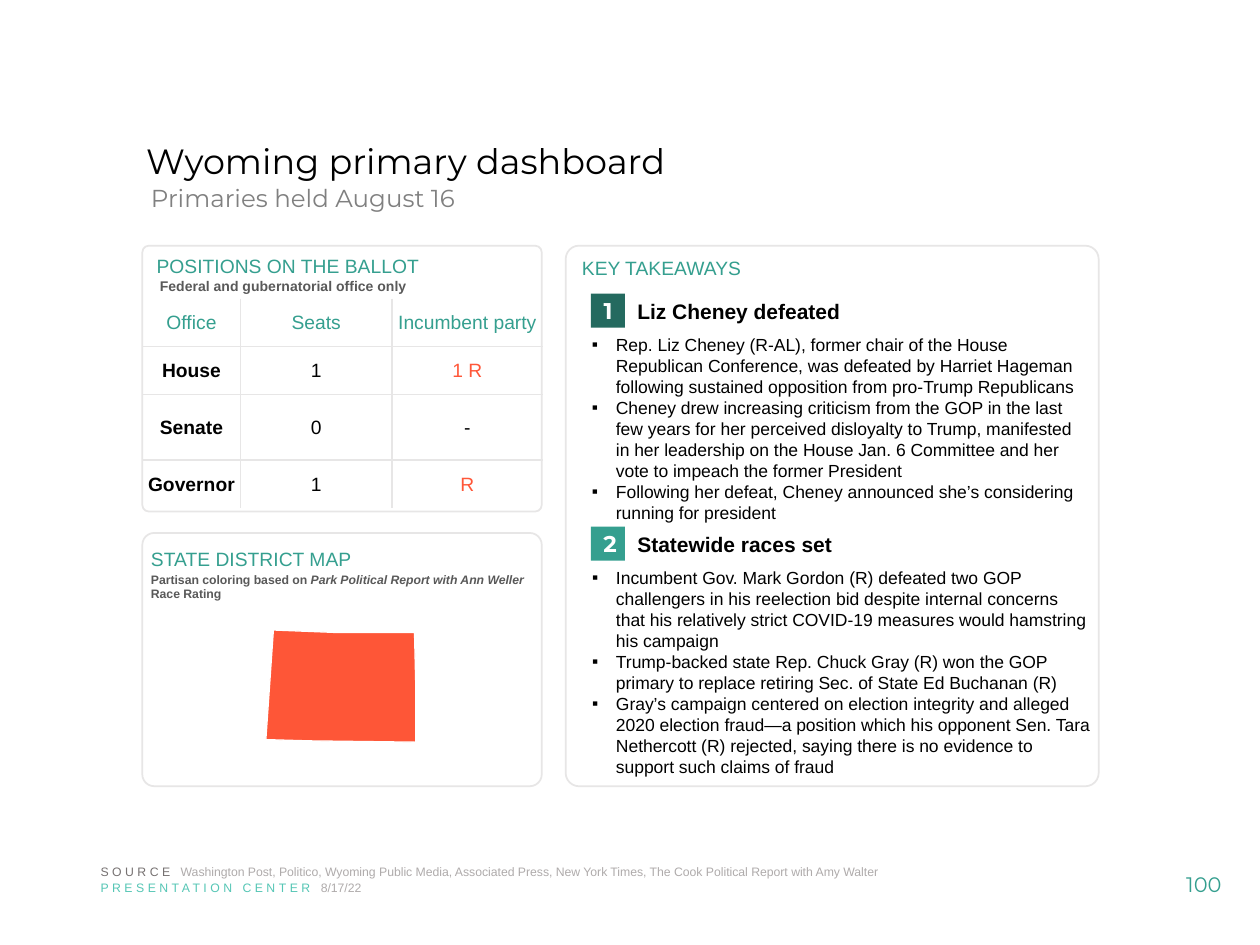
from lxml.etree import SubElement
from pptx import Presentation
from pptx.dml.color import RGBColor
from pptx.enum.shapes import MSO_SHAPE as Preset
from pptx.enum.text import MSO_ANCHOR as Anchor, PP_ALIGN as Align
from pptx.oxml.ns import qn
from pptx.util import Inches, Pt

TEAL, DARK_TEAL, MINT = "359F8F", "246A5F", "55C6B5"
RED, BORDER, BLACK, WHITE = "FF5739", "E7E6E6", "000000", "FFFFFF"
SUBTLE, FAINT, NOTE, SOURCE_GRAY = "808080", "AFABAB", "595959", "767171"

TITLE = "Wyoming primary dashboard"
SUBTITLE = "Primaries held August 16"
BALLOT = [
    ("Office", "Seats", "Incumbent party"),
    ("House", "1", "1 R"),
    ("Senate", "0", "-"),
    ("Governor", "1", "R"),
]
COLUMN_WIDTHS = (0.78, 1.2, 1.2)
ROW_HEIGHTS = (0.38, 0.38, 0.52, 0.38)
PANELS = [
    ((4.49, 1.95, 4.23, 4.29), 0.025, "KEY TAKEAWAYS"),
    ((1.13, 4.23, 3.17, 2.01), 0.047, ""),
    ((1.13, 1.95, 3.17, 2.11), 0.025, "POSITIONS ON THE BALLOT"),
]
TAKEAWAYS = [
    ("1", DARK_TEAL, 2.33, "Liz Cheney defeated", (4.6, 2.6, 4.07, 1.62), [
        "Rep. Liz Cheney (R-AL), former chair of the House Republican Conference, was defeated "
        "by Harriet Hageman following sustained opposition from pro-Trump Republicans",
        "Cheney drew increasing criticism from the GOP in the last few years for her perceived "
        "disloyalty to Trump, manifested in her leadership on the House Jan. 6 Committee and her "
        "vote to impeach the former President",
        "Following her defeat, Cheney announced she’s considering running for president",
    ]),
    ("2", TEAL, 4.18, "Statewide races set", (4.6, 4.45, 4.15, 1.78), [
        "Incumbent Gov. Mark Gordon (R) defeated two GOP challengers in his reelection bid despite "
        "internal concerns that his relatively strict COVID-19 measures would hamstring his campaign",
        "Trump-backed state Rep. Chuck Gray (R) won the GOP primary to replace retiring Sec. of "
        "State Ed Buchanan (R)",
        "Gray’s campaign centered on election integrity and alleged 2020 election fraud—a position "
        "which his opponent Sen. Tara Nethercott (R) rejected, saying there is no evidence to "
        "support such claims of fraud",
    ]),
]
MAP_NOTE = [
    ("Partisan coloring based on ", {}),
    ("Park Political Report with Ann Weller ", {"italic": True}),
    ("Race Rating", {}),
]
FOOTERS = [
    (6.81, 6.46, "SOURCE ", SOURCE_GRAY,
     "Washington Post, Politico, Wyoming Public Media, Associated Press, New York Times, "
     "The Cook Political Report with Amy Walter"),
    (6.94, 2.94, "PRESENTATION CENTER ", MINT, "8/17/22"),
]
WYOMING = [(2.11, 5.87), (2.17, 5), (2.67, 5.02), (3.29, 5.02),
           (3.3, 5.45), (3.3, 5.89), (2.46, 5.88)]


def rgb(code):
    return RGBColor.from_string(code)


def style(run, size, color, face="Arial", bold=False, italic=False, spacing=None):
    font = run.font
    font.size, font.name, font.bold, font.italic = Pt(size), face, bold, italic
    font.color.rgb = rgb(color)
    if spacing:
        run._r.get_or_add_rPr().set("spc", str(spacing * 100))


def write(frame, text, size, color, align=Align.LEFT, **options):
    frame.text = text
    for paragraph in frame.paragraphs:
        paragraph.alignment = align
        for run in paragraph.runs:
            style(run, size, color, **options)


def text_box(slide, box):
    frame = slide.shapes.add_textbox(*map(Inches, box)).text_frame
    frame.word_wrap = True
    return frame


def block(slide, preset, box, fill, line=None):
    shape = slide.shapes.add_shape(preset, *map(Inches, box))
    paint(shape, fill, line)
    return shape


def paint(shape, fill, line=None, width=1):
    shape.shadow.inherit = False
    shape.fill.solid()
    shape.fill.fore_color.rgb = rgb(fill)
    if line:
        shape.line.color.rgb = rgb(line)
        shape.line.width = Pt(width)
    else:
        shape.line.fill.background()


def add_bullet(paragraph):
    properties = paragraph._p.get_or_add_pPr()
    properties.set("marL", str(Inches(0.19)))
    properties.set("indent", str(-Inches(0.19)))
    color = SubElement(properties, qn("a:buClr"))
    SubElement(color, qn("a:srgbClr"), val=BLACK)
    SubElement(properties, qn("a:buFont"), typeface="Arial")
    SubElement(properties, qn("a:buChar"), char="▪")


def set_borders(cell, sides):
    properties = cell._tc.get_or_add_tcPr()
    for position, side in enumerate(("lnL", "lnR", "lnT", "lnB")):
        line = properties.makeelement(qn(f"a:{side}"), {"w": str(Pt(1))})
        properties.insert(position, line)
        if side in sides:
            fill = SubElement(line, qn("a:solidFill"))
            SubElement(fill, qn("a:srgbClr"), val=BORDER)
        else:
            SubElement(line, qn("a:noFill"))


def add_ballot(slide):
    rows, columns = len(BALLOT), len(BALLOT[0])
    box = (1.13, 2.37, sum(COLUMN_WIDTHS), sum(ROW_HEIGHTS))
    table = slide.shapes.add_table(rows, columns, *map(Inches, box)).table
    table.first_row = table.horz_banding = False
    for column, width in zip(table.columns, COLUMN_WIDTHS):
        column.width = Inches(width)
    for row, height in zip(table.rows, ROW_HEIGHTS):
        row.height = Inches(height)
    for r, entries in enumerate(BALLOT):
        for c, entry in enumerate(entries):
            cell = table.cell(r, c)
            cell.fill.background()
            cell.vertical_anchor = Anchor.MIDDLE
            cell.margin_left = cell.margin_right = cell.margin_top = Inches(0.01)
            cell.margin_bottom = 0
            color = TEAL if r == 0 else RED if entry.endswith("R") else BLACK
            write(cell.text_frame, entry, 11, color, Align.CENTER, bold=r > 0 and c == 0)
            inner = {"lnL": c > 0, "lnR": c < columns - 1, "lnT": r > 0, "lnB": r < rows - 1}
            set_borders(cell, [side for side, shown in inner.items() if shown])


def add_takeaway(slide, number, color, top, heading, box, points):
    badge = block(slide, Preset.RECTANGLE, (4.69, top, 0.27, 0.27), color)
    badge.text_frame.vertical_anchor = Anchor.MIDDLE
    write(badge.text_frame, number, 13, WHITE, Align.CENTER, face="Montserrat", bold=True)
    write(text_box(slide, (4.96, top - 0.01, 2.2, 0.3)), heading, 12, BLACK, bold=True)
    details = text_box(slide, box)
    write(details, "\n".join(points), 10, BLACK)
    for paragraph in details.paragraphs:
        add_bullet(paragraph)


def main():
    deck = Presentation()
    deck.slide_width, deck.slide_height = Inches(10), Inches(7.5)
    slide = deck.slides.add_slide(deck.slide_layouts[5])

    title = slide.shapes.title
    title.left, title.top, title.width, title.height = map(Inches, (1.06, 0.9, 8.03, 0.79))
    title.text_frame.vertical_anchor = Anchor.MIDDLE
    write(title.text_frame, TITLE, 20, BLACK, face="Montserrat")
    title.text_frame.paragraphs[0].line_spacing = 0.9
    write(text_box(slide, (1.1, 1.4, 2.9, 0.34)), SUBTITLE, 14, SUBTLE, face="Montserrat")

    for box, radius, heading in PANELS:
        panel = block(slide, Preset.ROUNDED_RECTANGLE, box, WHITE, BORDER)
        panel.adjustments[0] = radius
        panel.text_frame.vertical_anchor = Anchor.TOP
        if heading:
            write(panel.text_frame, heading, 11, TEAL)

    add_ballot(slide)
    write(text_box(slide, (1.17, 2.15, 2.18, 0.19)),
          "Federal and gubernatorial office only", 8, NOTE, bold=True)

    write(text_box(slide, (1.1, 4.29, 3.46, 0.29)), "STATE DISTRICT MAP", 11, TEAL)
    map_note = text_box(slide, (1.1, 4.49, 3.2, 0.34)).paragraphs[0]
    for words, options in MAP_NOTE:
        run = map_note.add_run()
        run.text = words
        style(run, 7, NOTE, bold=True, **options)
    corners = [(Inches(x), Inches(y)) for x, y in WYOMING]
    outline = slide.shapes.build_freeform(*corners[0])
    outline.add_line_segments(corners[1:], close=True)
    paint(outline.convert_to_shape(), "FE5637", WHITE, 0.75)

    for takeaway in TAKEAWAYS:
        add_takeaway(slide, *takeaway)

    for top, width, label, color, detail in FOOTERS:
        footer = text_box(slide, (0.7, top, width, 0.22)).paragraphs[0]
        for words, shade, spacing in ((label, color, 2), (detail, FAINT, None)):
            run = footer.add_run()
            run.text = words
            style(run, 7, shade, spacing=spacing)

    page_number = text_box(slide, (9.11, 6.82, 0.89, 0.4))
    page_number.vertical_anchor = Anchor.MIDDLE
    write(page_number, "100", 12, TEAL, Align.CENTER, face="Montserrat")

    deck.save("out.pptx")


if __name__ == "__main__":
    main()
